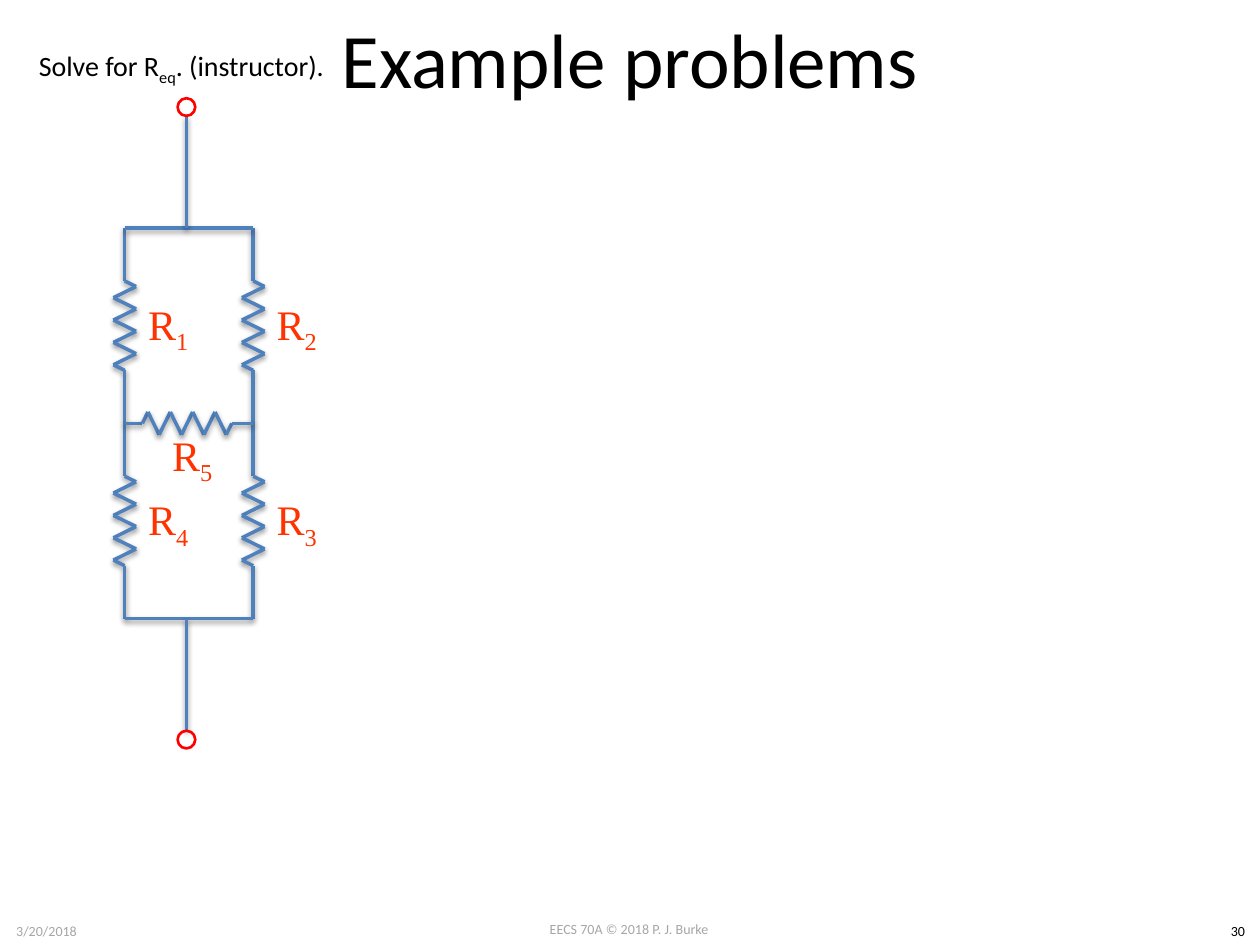
from dataclasses import dataclass
from itertools import pairwise

from lxml.etree import SubElement
from pptx import Presentation
from pptx.dml.color import RGBColor
from pptx.enum.shapes import MSO_CONNECTOR, MSO_SHAPE
from pptx.enum.text import MSO_ANCHOR, PP_ALIGN
from pptx.oxml.ns import qn
from pptx.util import Inches, Pt


@dataclass(frozen=True)
class Theme:
    sans: str = "Calibri"
    serif: str = "Times New Roman"
    black: str = "000000"
    gray: str = "A6A6A6"
    wire: str = "4F81BD"
    label: str = "FF3300"
    port: str = "FF0000"
    title: int = 44
    symbol: int = 24
    body: int = 16
    foot: int = 8
    thick: float = 2
    ring: float = 1.5


THEME = Theme()

# Circuit grid, in inches
LEFT, MID, RIGHT = 0.99, 1.48, 2.01
TOP, WAIST, BASE = 1.81, 3.36, 4.91
ZIG = 0.71      # length of the zigzag
AMP = 0.09      # half its width
TEETH = 8


def add_text(shapes, box, runs, size, color, font=THEME.sans,
             align=PP_ALIGN.CENTER, anchor=MSO_ANCHOR.TOP, wrap=True):
    """Text box; each run is a (text, is subscript) pair."""
    frame = shapes.add_textbox(*map(Inches, box)).text_frame
    frame.word_wrap = wrap
    frame.vertical_anchor = anchor
    para = frame.paragraphs[0]
    para.alignment = align
    for text, sub in runs:
        run = para.add_run()
        run.text = text
        run.font.name = font
        run.font.size = Pt(size)
        run.font.color.rgb = RGBColor.from_string(color)
        if sub:
            run.font._element.set("baseline", "-25000")


def add_wire(shapes, start, end):
    """Straight wire with a soft shadow below it."""
    wire = shapes.add_connector(MSO_CONNECTOR.STRAIGHT,
                                *map(Inches, (*start, *end)))
    wire.line.color.rgb = RGBColor.from_string(THEME.wire)
    wire.line.width = Pt(THEME.thick)
    effects = SubElement(wire._element.spPr, qn("a:effectLst"))
    shadow = SubElement(effects, qn("a:outerShdw"), blurRad="40000",
                        dist="20000", dir="5400000", rotWithShape="0")
    color = SubElement(shadow, qn("a:srgbClr"), val=THEME.black)
    SubElement(color, qn("a:alpha"), val="38000")


def add_zigzag(shapes, start, lead, tail, flat=False):
    """Resistor from start: lead, zigzag, tail; down, or right if flat."""
    pitch = ZIG / TEETH
    side = -AMP if flat else AMP
    kinks = [(lead + (i + 0.5) * pitch, side * (-1) ** i)
             for i in range(TEETH)]
    steps = [(0, 0), (lead, 0), *kinks,
             (lead + ZIG, 0), (lead + ZIG + tail, 0)]
    x, y = start
    points = [(x + a, y + b) if flat else (x + b, y + a) for a, b in steps]
    for one, two in pairwise(points):
        add_wire(shapes, one, two)


def add_label(shapes, x, y, digit):
    add_text(shapes, (x, y, 1.19, 0.73), [("R", False), (digit, True)],
             THEME.symbol, THEME.label, THEME.serif, anchor=MSO_ANCHOR.MIDDLE)


def add_port(shapes, y):
    """Open terminal ring."""
    size = 0.14
    port = shapes.add_shape(MSO_SHAPE.OVAL, Inches(MID - size / 2), Inches(y),
                            Inches(size), Inches(size))
    port.shadow.inherit = False
    port.fill.background()
    port.line.color.rgb = RGBColor.from_string(THEME.port)
    port.line.width = Pt(THEME.ring)


def add_circuit(shapes):
    # Four upright resistors
    for x, y, digit in ((LEFT, TOP, "1"), (RIGHT, TOP, "2"),
                        (LEFT, WAIST, "4"), (RIGHT, WAIST, "3")):
        group = shapes.add_group_shape().shapes
        add_label(group, x - 0.25, y + 0.42, digit)
        add_zigzag(group, (x, y), 0.42, 0.42)

    # Bridge resistor
    bridge = shapes.add_group_shape().shapes
    add_zigzag(bridge, (LEFT, WAIST), 0.14, 0.17, flat=True)
    add_label(shapes, 0.93, 3.27, "5")

    # Rails, feeds and ports
    for rail, feed, port in ((TOP, 0.92, 0.78), (BASE, 5.8, 5.8)):
        add_wire(shapes, (LEFT, rail), (RIGHT, rail))
        add_wire(shapes, (MID, rail), (MID, feed))
        add_port(shapes, port)


def main():
    deck = Presentation()
    deck.slide_width, deck.slide_height = Inches(10), Inches(7.5)
    shapes = deck.slides.add_slide(deck.slide_layouts[6]).shapes

    # Footer
    for box, text, color in (
            ((3.83, 7.26, 2.33, 0.24), "EECS 70A © 2018 P. J. Burke",
             THEME.gray),
            ((0, 7.27, 0.74, 0.24), "3/20/2018", THEME.gray),
            ((9.65, 7.27, 0.35, 0.24), "30", THEME.black)):
        add_text(shapes, box, [(text, False)], THEME.foot, color)

    # Title and task
    add_text(shapes, (0.5, -0.17, 9, 1.25), [("Example problems", False)],
             THEME.title, THEME.black, anchor=MSO_ANCHOR.MIDDLE)
    add_text(shapes, (0.21, 0.34, 2.59, 0.37),
             [("Solve for R", False), ("eq", True),
              (". (instructor).", False)],
             THEME.body, THEME.black, align=PP_ALIGN.LEFT, wrap=False)

    add_circuit(shapes)
    deck.save("out.pptx")


if __name__ == "__main__":
    main()
